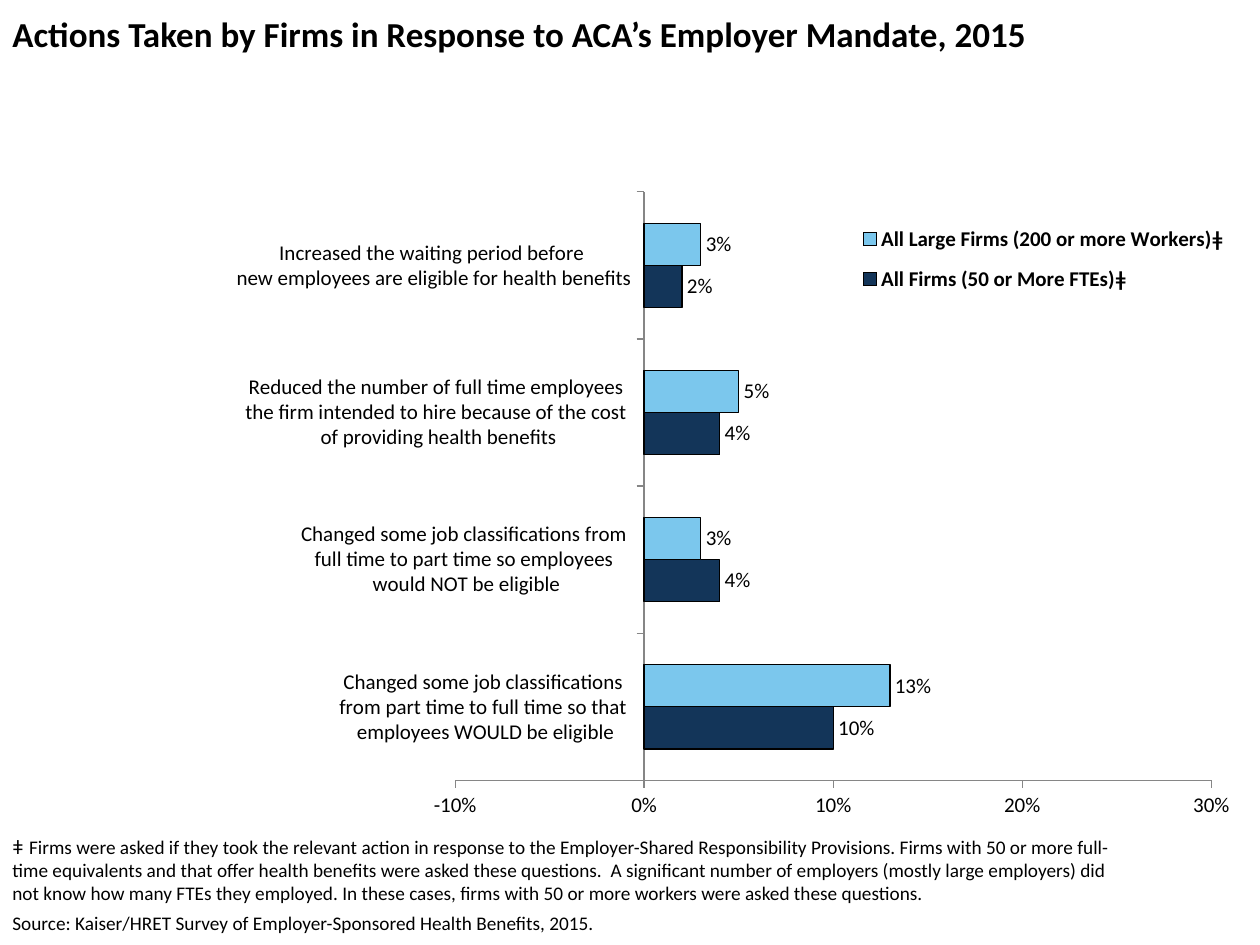
from pptx import Presentation
from pptx.chart.data import CategoryChartData
from pptx.dml.color import RGBColor
from pptx.enum.chart import XL_CHART_TYPE, XL_LABEL_POSITION, XL_LEGEND_POSITION, XL_TICK_MARK
from pptx.enum.text import MSO_ANCHOR
from pptx.oxml import parse_xml
from pptx.oxml.ns import nsdecls
from pptx.util import Cm, Pt

BAR = XL_CHART_TYPE.BAR_CLUSTERED
END = XL_LABEL_POSITION.OUTSIDE_END
BOTTOM = XL_LEGEND_POSITION.BOTTOM
OUT, NONE = XL_TICK_MARK.OUTSIDE, XL_TICK_MARK.NONE
TOP = MSO_ANCHOR.TOP

COLORS = {"ink": "000000", "paper": "FFFFFF", "axis": "868686",
          "navy": "133559", "sky": "7BC7ED"}
FACE = "Calibri"

TITLE = "Actions Taken by Firms in Response to ACA’s Employer Mandate, 2015"
NOTES = [
    [("ǂ ", "Arial"),
     ("Firms were asked if they took the relevant action in response to the "
      "Employer-Shared Responsibility Provisions. Firms with 50 or more full-time "
      "equivalents and that offer health benefits were asked these questions.  "
      "A significant number of employers (mostly large employers) did not know how "
      "many FTEs they employed. In these cases, firms with 50 or more workers were "
      "asked these questions.", FACE)],
    [("Source: Kaiser/HRET Survey of Employer-Sponsored Health Benefits, 2015.", FACE)],
]
ACTIONS = [
    "Changed some job classifications \nfrom part time to full time so that \n"
    "employees WOULD be eligible",
    "Changed some job classifications from \nfull time to part time so employees \n"
    "would NOT be eligible",
    "Reduced the number of full time employees \n"
    "the firm intended to hire because of the cost \nof providing health benefits",
    "Increased the waiting period before \n"
    "new employees are eligible for health benefits",
]
SERIES = [
    ("All Firms (50 or More FTEs)ǂ", "navy", (0.10, 0.04, 0.04, 0.02)),
    ("All Large Firms (200 or more Workers)ǂ", "sky", (0.13, 0.03, 0.05, 0.03)),
]


def rgb(name):
    return RGBColor.from_string(COLORS[name])


def style(font, size, bold=False, face=FACE):
    font.name, font.size, font.bold = face, Pt(size), bold
    font.color.rgb = rgb("ink")


def add_text(slide, paras, box, size, bold=False, gap=0, fill=None):
    shape = slide.shapes.add_textbox(*map(Cm, box))
    if fill:
        shape.fill.solid()
        shape.fill.fore_color.rgb = rgb(fill)
    frame = shape.text_frame
    frame.word_wrap, frame.vertical_anchor = True, TOP
    for i, runs in enumerate(paras):
        para = frame.add_paragraph() if i else frame.paragraphs[0]
        para.space_before = Pt(gap if i else 0)
        for text, face in runs:
            run = para.add_run()
            run.text = text
            style(run.font, size, bold, face)


def layout(x, y, w, h, inner=False):
    target = '<c:layoutTarget val="inner"/>' if inner else ""
    modes = '<c:xMode val="edge"/><c:yMode val="edge"/>'
    sizes = "".join(f'<c:{k} val="{v}"/>' for k, v in zip("xywh", (x, y, w, h)))
    return parse_xml(f'<c:layout {nsdecls("c")}><c:manualLayout>{target}{modes}{sizes}'
                     '</c:manualLayout></c:layout>')


def set_layout(parent, new, index):
    for old in parent.findall(new.tag):
        parent.remove(old)
    parent.insert(index, new)


def add_bars(slide, box):
    data = CategoryChartData(number_format="0%")
    data.categories = ACTIONS
    for name, _, vals in SERIES:
        data.add_series(name, vals)
    chart = slide.shapes.add_chart(BAR, *map(Cm, box), data).chart
    chart.has_title = False
    style(chart.font, 12)

    plot = chart.plots[0]
    plot.gap_width, plot.overlap, plot.vary_by_categories = 150, 0, False
    for bars, (_, color, _) in zip(plot.series, SERIES):
        bars.format.fill.solid()
        bars.format.fill.fore_color.rgb = rgb(color)
        bars.format.line.color.rgb = rgb("ink")
        bars.format.line.width = Pt(0.75)
        labels = bars.data_labels
        labels.show_value, labels.position = True, END
        labels.number_format, labels.number_format_is_linked = "0%", False
        style(labels.font, 12)

    scale = chart.value_axis
    scale.minimum_scale, scale.maximum_scale, scale.major_unit = -0.1, 0.3, 0.1
    scale.has_major_gridlines = False
    scale.tick_labels.number_format = "0%"
    scale.tick_labels.number_format_is_linked = False
    for axis in (scale, chart.category_axis):
        axis.major_tick_mark, axis.minor_tick_mark = OUT, NONE
        axis.format.line.color.rgb = rgb("axis")
        axis.format.line.width = Pt(0.75)
        style(axis.tick_labels.font, 12)

    chart.has_legend = True
    legend = chart.legend
    legend.position, legend.include_in_layout = BOTTOM, False
    style(legend.font, 12, bold=True)
    set_layout(legend._element, layout(0.68, 0.05, 0.31, 0.15), 1)
    set_layout(plot._element.getparent(), layout(0.36, 0.02, 0.61, 0.92, True), 0)


def main():
    deck = Presentation()
    deck.slide_width, deck.slide_height = Cm(25.4), Cm(19.05)
    slide = deck.slides.add_slide(deck.slide_layouts[6])
    add_text(slide, [[(TITLE, FACE)]], (0, 0.13, 25.4, 3.25), 20, bold=True, fill="paper")
    add_text(slide, NOTES, (0, 16.71, 23.06, 2.29), 11, gap=4)
    add_bars(slide, (0.18, 3.61, 24.99, 12.9))
    deck.save("out.pptx")


if __name__ == "__main__":
    main()
